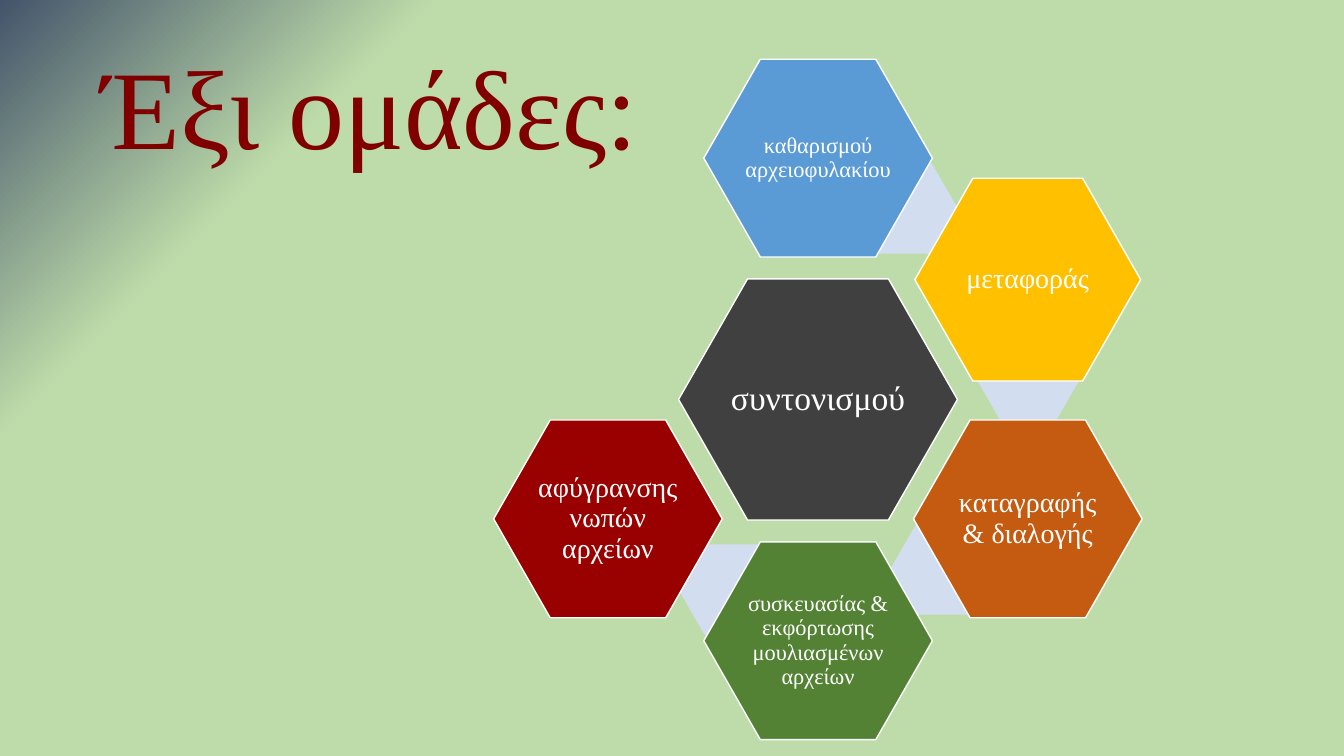
from pptx import Presentation
from pptx import util as u
from pptx.dml import color
from pptx.enum import shapes, text

FONT = "Times New Roman"


def rgb(code):
    return color.RGBColor.from_string(code)


def hexagon(box, fill, adj):
    hexa = slide.shapes.add_shape(shapes.MSO_SHAPE.HEXAGON, *[u.Pt(v) for v in box])
    hexa.adjustments[0] = adj
    hexa.adjustments[1] = 1.1547
    hexa.shadow.inherit = False
    hexa.fill.solid()
    hexa.fill.fore_color.rgb = rgb(fill)
    hexa.line.fill.background()
    return hexa


prs = Presentation()
prs.slide_width, prs.slide_height = u.Pt(960), u.Pt(540)
slide = prs.slides.add_slide(prs.slide_layouts[5])

back = slide.background.fill
back.gradient()
back.gradient_angle = 315
for stop, place, code in zip(back.gradient_stops, (0, 0.21), ("44546A", "BEDCAA")):
    stop.position = place
    stop.color.rgb = rgb(code)

title = slide.shapes.title
title.left, title.top, title.width, title.height = [u.Pt(v) for v in (66, 28.75, 828, 104.4)]
frame = title.text_frame
frame.text = "Έξι ομάδες:"
frame.auto_size = text.MSO_AUTO_SIZE.NONE
frame.vertical_anchor = text.MSO_ANCHOR.MIDDLE
line = frame.paragraphs[0]
line.alignment = text.PP_ALIGN.LEFT
line.line_spacing = 0.9
font = line.runs[0].font
font.name, font.size = FONT, u.Pt(80)
font.color.rgb = rgb("800000")

WIDE, HIGH = 163.3, 141.3
teams = [
    ("συντονισμού", 24, "404040", (484.7, 199.2, 199.2, 172.3), None),
    ("καθαρισμού αρχειοφυλακίου", 16, "5B9BD5", (502.7, 42.3, WIDE, HIGH), (609.2, 116.6)),
    ("μεταφοράς", 20, "FFC000", (653.5, 127.4, 161.3, 144.8), (697, 237.6)),
    ("καταγραφής & διαλογής", 20, "C55A11", (652.5, 300, WIDE, HIGH), (635.8, 374.4)),
    ("συσκευασίας & εκφόρτωσης μουλιασμένων αρχείων", 16, "548235",
     (502.7, 387, WIDE, HIGH), (484.6, 388.8)),
    ("αφύγρανσης νωπών αρχείων", 20, "990000", (352.6, 300, WIDE, HIGH), None),
]

for label, size, fill, box, link in teams:
    if link:
        hexagon((*link, 75, 64.6), "D2DEEF", 0.289)
    team = hexagon(box, fill, 0.286)
    team.line.color.rgb = rgb("FFFFFF")
    team.line.width = u.Pt(1)
    frame = team.text_frame
    frame.text = label
    frame.word_wrap = True
    frame.vertical_anchor = text.MSO_ANCHOR.MIDDLE
    frame.margin_left = frame.margin_right = u.Pt(1.5)
    frame.margin_top = frame.margin_bottom = u.Pt(1.5)
    line = frame.paragraphs[0]
    line.alignment = text.PP_ALIGN.CENTER
    line.line_spacing = 0.9
    font = line.runs[0].font
    font.name, font.size = FONT, u.Pt(size)
    font.color.rgb = rgb("FFFFFF")

prs.save("out.pptx")
